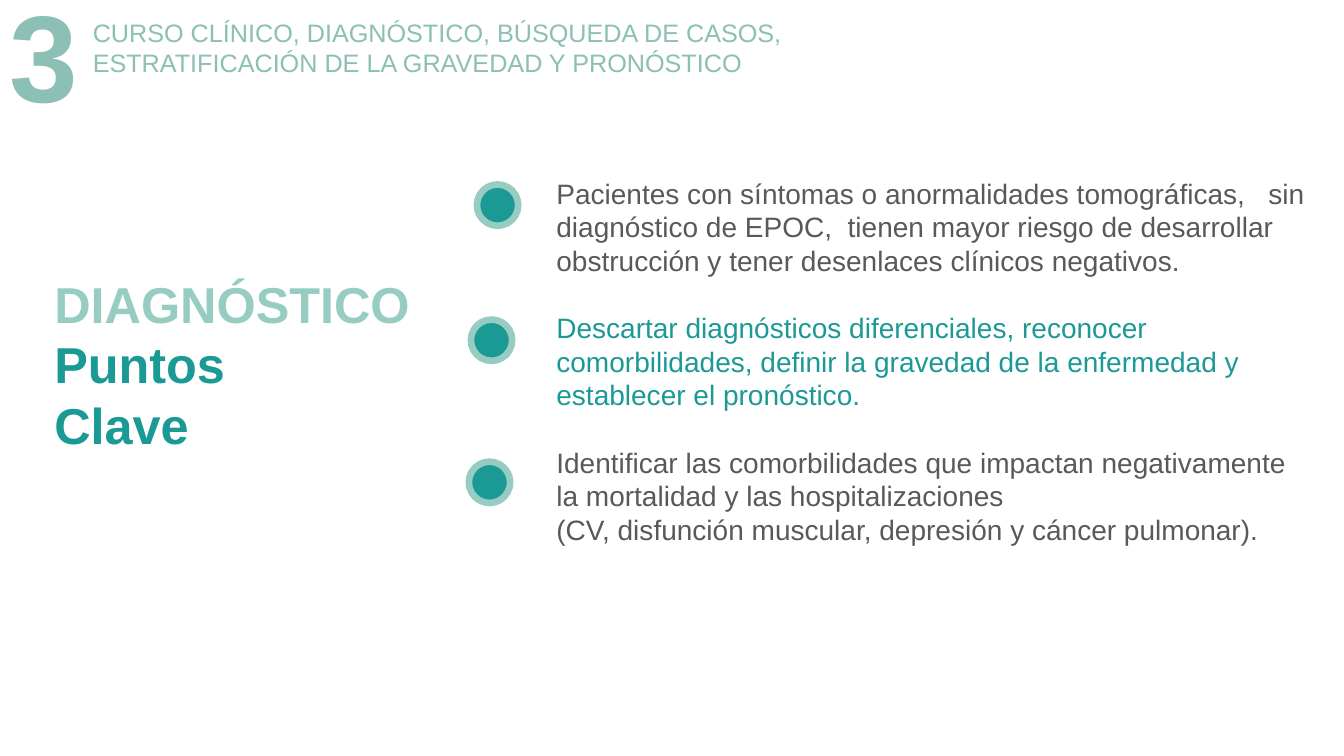
import pptx
import pptx.util
import pptx.dml.color
import pptx.enum.shapes
import pptx.enum.text

Inches, Pt = pptx.util.Inches, pptx.util.Pt

SAGE, MINT, TEAL, GRAY = "8CBFB5", "97CCC2", "1B9995", "595959"

CHAPTER = "3"
TITLE = [
    ("CURSO CLÍNICO, DIAGNÓSTICO, BÚSQUEDA DE CASOS,", SAGE, 0),
    ("ESTRATIFICACIÓN DE LA GRAVEDAD Y PRONÓSTICO", SAGE, 0),
]
TOPIC = [("DIAGNÓSTICO", MINT, 0), ("Puntos", TEAL, 0), ("Clave", TEAL, 0)]
# text, colour, space before in points
KEY_POINTS = [
    ("Pacientes con síntomas o anormalidades tomográficas,   sin diagnóstico de EPOC,  "
     "tienen mayor riesgo de desarrollar obstrucción y tener desenlaces clínicos negativos.",
     GRAY, 0),
    ("Descartar diagnósticos diferenciales, reconocer comorbilidades, definir la gravedad "
     "de la enfermedad y establecer el pronóstico.", TEAL, 24),
    ("Identificar las comorbilidades que impactan negativamente la mortalidad y las "
     "hospitalizaciones", GRAY, 24),
    ("(CV, disfunción muscular, depresión y cáncer pulmonar).", GRAY, 0),
]
MARKERS = [(4.73, 1.83), (4.67, 3.17), (4.65, 4.58)]
MARKER_SIZE = 0.41


def rgb(color):
    return pptx.dml.color.RGBColor.from_string(color)


def write(sp, box, lines, size, bold=False, wrap=True):
    """Place a text shape and fill it with (text, colour, space before) lines."""
    sp.left, sp.top, sp.width, sp.height = (Inches(v) for v in box)
    tf = sp.text_frame
    tf.word_wrap = wrap
    tf.auto_size = pptx.enum.text.MSO_AUTO_SIZE.NONE
    tf.vertical_anchor = pptx.enum.text.MSO_ANCHOR.TOP
    for i, (text, color, before) in enumerate(lines):
        p = tf.paragraphs[0] if i == 0 else tf.add_paragraph()
        p.alignment = pptx.enum.text.PP_ALIGN.LEFT
        p.space_before = Pt(before)
        r = p.add_run()
        r.text = text
        r.font.name = "Arial"
        r.font.size = Pt(size)
        r.font.bold = bold
        r.font.color.rgb = rgb(color)


def add_text(s, box, lines, size, **fmt):
    sp = s.shapes.add_textbox(0, 0, 0, 0)
    write(sp, box, lines, size, **fmt)


def add_marker(s, left, top):
    side = Inches(MARKER_SIZE)
    sp = s.shapes.add_shape(pptx.enum.shapes.MSO_SHAPE.OVAL,
                            Inches(left), Inches(top), side, side)
    sp.shadow.inherit = False
    sp.fill.solid()
    sp.fill.fore_color.rgb = rgb(TEAL)
    sp.line.color.rgb = rgb(MINT)
    sp.line.width = Pt(4.75)


def main():
    prs = pptx.Presentation()
    prs.slide_width, prs.slide_height = Inches(13.33), Inches(7.5)
    s = prs.slides.add_slide(prs.slide_layouts[5])

    write(s.shapes.title, (0.82, 0.12, 7.17, 0.71), TITLE, 18)
    add_text(s, (0, -0.25, 0.89, 1.58), [(CHAPTER, SAGE, 0)], 88, bold=True, wrap=False)
    add_text(s, (0.44, 2.66, 4.81, 1.92), TOPIC, 36, bold=True)
    for left, top in MARKERS:
        add_marker(s, left, top)
    add_text(s, (5.42, 1.7, 7.63, 3.8), KEY_POINTS, 20)

    prs.save("out.pptx")


if __name__ == "__main__":
    main()
